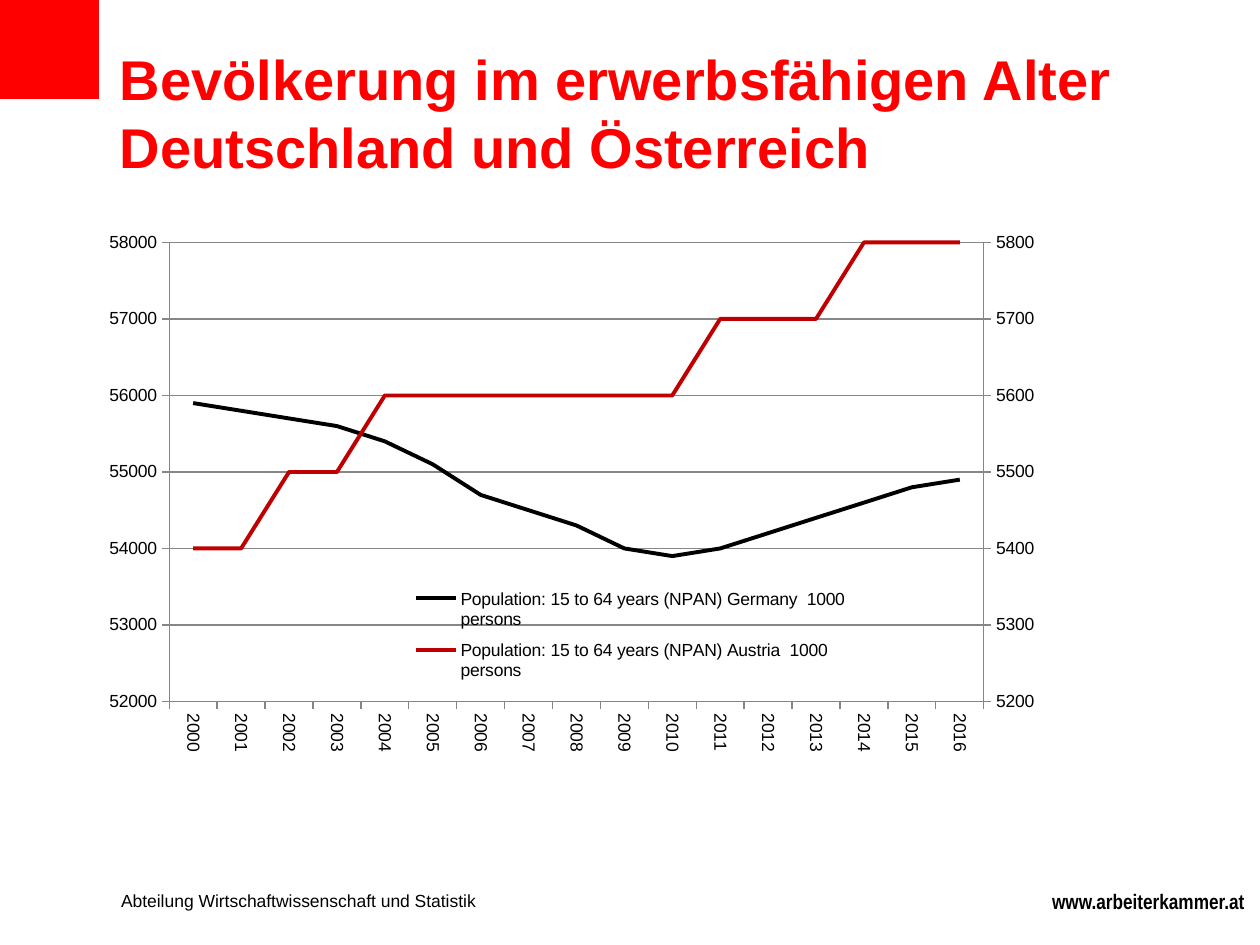
from copy import deepcopy
from lxml.etree import SubElement as sub
from pptx import Presentation
from pptx.chart.data import CategoryChartData as Data
from pptx.dml.color import RGBColor
from pptx.enum.chart import XL_CHART_TYPE as Kind, XL_LEGEND_POSITION as Side
from pptx.enum.chart import XL_MARKER_STYLE as Mark, XL_TICK_MARK as Tick
from pptx.enum.shapes import MSO_SHAPE as Shape
from pptx.enum.text import MSO_ANCHOR as Anchor, PP_ALIGN as Align
from pptx.oxml.ns import qn
from pptx.util import Emu, Pt

PX = 9144000 / 1260
RED, BLACK, GRAY, WINE = "FF0000", "000000", "868686", "C00000"

YEARS = [str(y) for y in range(2000, 2017)]
GERMANY = [55900, 55800, 55700, 55600, 55400, 55100, 54700, 54500, 54300,
           54000, 53900, 54000, 54200, 54400, 54600, 54800, 54900]
AUSTRIA = [5400, 5400, 5500, 5500, 5600, 5600, 5600, 5600, 5600,
           5600, 5600, 5700, 5700, 5700, 5800, 5800, 5800]
NAME = "Population: 15 to 64 years (NPAN) {}  1000 persons"


def px(*nums):
    return [Emu(round(n * PX)) for n in nums]


def color(code):
    return RGBColor.from_string(code)


def style(font, size, code=BLACK, face="Arial", bold=False):
    font.size, font.name, font.bold = Pt(size), face, bold
    font.color.rgb = color(code)


def inset(frame, *sides):
    (frame.margin_left, frame.margin_top,
     frame.margin_right, frame.margin_bottom) = px(*sides)


def block(slide, box, code):
    shape = slide.shapes.add_shape(Shape.RECTANGLE, *px(*box))
    shape.shadow.inherit = False
    shape.fill.solid()
    shape.fill.fore_color.rgb = color(code)
    shape.line.fill.background()


def title(slide, box, lines):
    shape = slide.shapes.title
    shape.left, shape.top, shape.width, shape.height = px(*box)
    frame = shape.text_frame
    inset(frame, 15, 7, 13, 6)
    frame.vertical_anchor = Anchor.TOP
    para = frame.paragraphs[0]
    for i, line in enumerate(lines):
        if i:
            para.add_line_break()
        para.add_run().text = line
    para.alignment = Align.LEFT
    style(para.font, 32, RED, bold=True)


def label(slide, box, text, left=13, wrap=True, **look):
    frame = slide.shapes.add_textbox(*px(*box)).text_frame
    frame.word_wrap = wrap
    inset(frame, left, 6, 13, 6)
    para = frame.paragraphs[0]
    para.text = text
    style(para.font, **look)


def put(node, tag, value):
    node.find(".//" + qn(tag)).set("val", str(value))


def place(node, index, rect, inner=False):
    """Give a chart part a fixed place, as shares of the chart."""
    old = node.find(qn("c:layout"))
    if old is not None:
        node.remove(old)
    layout = node.makeelement(qn("c:layout"))
    node.insert(index, layout)
    manual = sub(layout, qn("c:manualLayout"))
    rows = [("layoutTarget", "inner")] if inner else []
    rows += [("xMode", "edge"), ("yMode", "edge"), *zip("xywh", rect)]
    for tag, value in rows:
        sub(manual, qn("c:" + tag)).set("val", str(value))


def split(area, low, high):
    """Move the second series to an axis on the right."""
    left = area.find(qn("c:lineChart"))
    right = deepcopy(left)
    left.remove(left.findall(qn("c:ser"))[1])
    right.remove(right.find(qn("c:ser")))
    left.addnext(right)
    cat, val = area.find(qn("c:catAx")), area.find(qn("c:valAx"))
    cat2, val2 = deepcopy(cat), deepcopy(val)
    val.addnext(val2)
    val2.addnext(cat2)
    for node, num in zip(right.findall(qn("c:axId")), (501, 502)):
        node.set("val", str(num))
    for axis, num, cross in ((cat2, 501, 502), (val2, 502, 501)):
        put(axis, "c:axId", num)
        put(axis, "c:crossAx", cross)
    put(cat2, "c:delete", 1)
    val2.remove(val2.find(qn("c:majorGridlines")))
    for tag, value in (("c:min", low), ("c:max", high), ("c:axPos", "r"),
                       ("c:crosses", "max"), ("c:majorUnit", 100)):
        put(val2, tag, value)


def graph(slide, box):
    data = Data(number_format="General")
    data.categories = YEARS
    data.add_series(NAME.format("Germany"), GERMANY)
    data.add_series(NAME.format("Austria"), AUSTRIA)
    chart = slide.shapes.add_chart(Kind.LINE, *px(*box), data).chart
    chart.has_title = False
    style(chart.font, 10)

    # Lines
    chart.plots[0].vary_by_categories = False
    for line, code in zip(chart.plots[0].series, (BLACK, WINE)):
        line.smooth = False
        line.marker.style = Mark.NONE
        line.format.line.width = Pt(2.25)
        line.format.line.color.rgb = color(code)

    # Axes
    cat, val = chart.category_axis, chart.value_axis
    val.minimum_scale, val.maximum_scale, val.major_unit = 52000, 58000, 1000
    val.has_major_gridlines = True
    for axis in (cat, val):
        axis.major_tick_mark, axis.minor_tick_mark = Tick.OUTSIDE, Tick.NONE
        style(axis.tick_labels.font, 10)
    for part in (cat, val, val.major_gridlines):
        part.format.line.color.rgb = color(GRAY)
        part.format.line.width = Pt(0.75)
    area = chart._chartSpace.find(".//" + qn("c:plotArea"))
    turn = area.find(qn("c:catAx")).find(".//" + qn("a:bodyPr"))
    turn.set("rot", "5400000")
    turn.set("vert", "horz")
    split(area, 5200, 5800)
    place(area, 0, (0.068, 0.021, 0.862, 0.841), inner=True)

    # Legend over the plot
    chart.has_legend = True
    key = chart.legend
    key.position, key.include_in_layout = Side.RIGHT, True
    style(key.font, 10)
    place(key._element, 1, (0.316, 0.635, 0.48, 0.21))


def main():
    deck = Presentation()
    deck.slide_width, deck.slide_height = px(1260, 945)
    slide = deck.slides.add_slide(deck.slide_layouts[5])

    # Head
    block(slide, (0, 0, 99, 99), RED)
    title(slide, (105, 38, 1061, 157),
          ("Bevölkerung im erwerbsfähigen Alter", "Deutschland und Österreich"))

    # Chart
    graph(slide, (105, 231, 945, 546))

    # Foot
    label(slide, (104, 884, 912, 49),
          "Abteilung Wirtschaftwissenschaft und Statistik", left=17, size=10)
    label(slide, (1039, 883, 231, 38), "www.arbeiterkammer.at", wrap=False,
          size=12, face="Arial Narrow", bold=True)
    deck.save("out.pptx")


if __name__ == "__main__":
    main()
